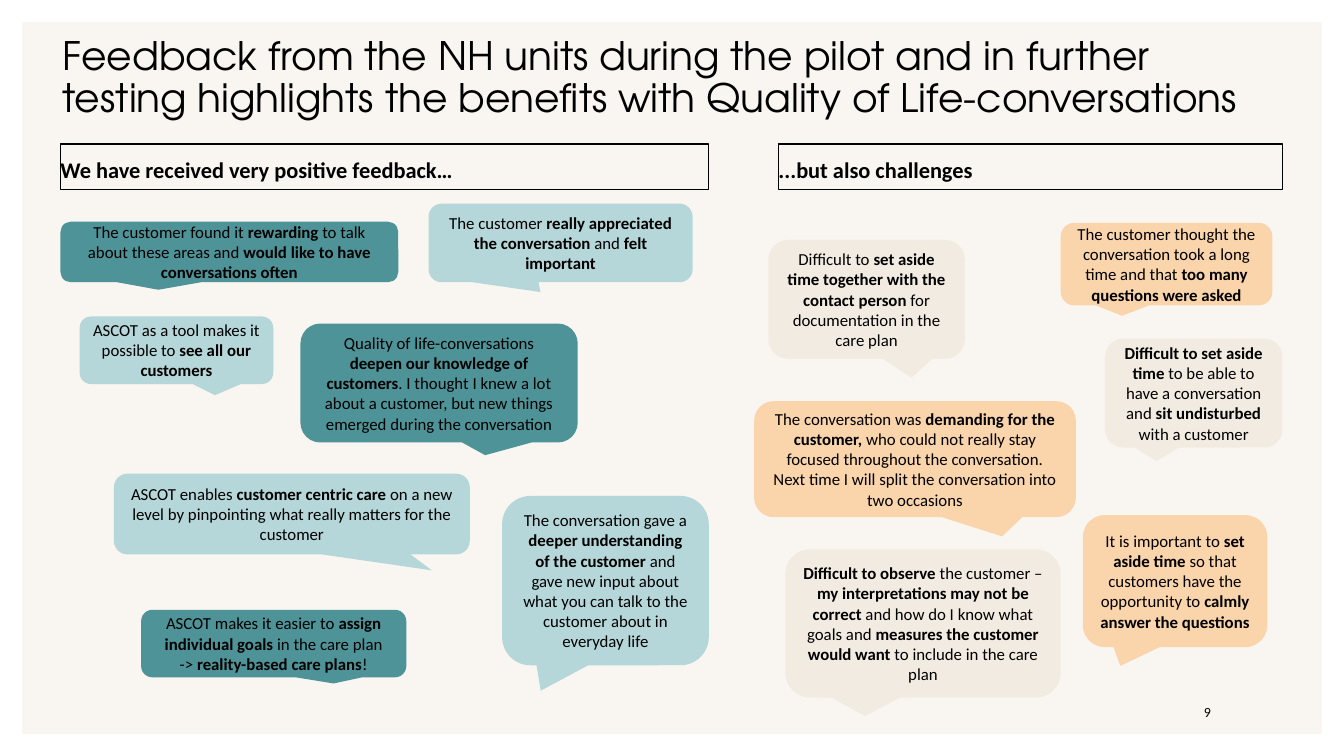
from pptx import Presentation
from pptx.dml.color import RGBColor
from pptx.enum.shapes import MSO_SHAPE as Shape
from pptx.enum.text import MSO_ANCHOR as Anchor, MSO_AUTO_SIZE as AutoSize, PP_ALIGN as Align
from pptx.util import Pt

PX = 9144  # EMU in one px, 100 px to the inch
COLORS = {
    "background": "F9F5F0",
    "white": "FFFFFF",
    "black": "000000",
    "teal": "4E9398",
    "aqua": "B5D7D9",
    "peach": "FAD4AA",
    "sand": "F2EBE1",
}
TITLE_FONT, BODY_FONT = "TeX Gyre Adventor", "Calibri"
DEFAULT_TAIL = (-0.21, 0.625)

TITLE = ("Feedback from the NH units during the pilot and in further testing "
         "highlights the benefits with Quality of Life-conversations")

# Box, colour, tail tip relative to the centre, text with bold between asterisks
QUOTES = [
    ((748, 398, 319, 115), "peach", (0.271, 0.667),
     "The conversation was **demanding for the customer,** who could not really stay focused "
     "throughout the conversation. Next time I will split the conversation into two occasions"),
    ((113, 470, 353, 80), "aqua", (0.393, 0.698),
     "ASCOT enables **customer centric care** on a new level by pinpointing "
     "what really matters for the customer"),
    ((298, 321, 275, 118), "teal", (0.166, 0.607),
     "Quality of life-conversations **deepen our knowledge of customers**. I thought I knew "
     "a lot about a customer, but new things emerged during the conversation"),
    ((762, 238, 195, 118), "sand", (0.228, 0.659),
     "Difficult to **set aside time together with the contact person** for documentation "
     "in the care plan"),
    ((425, 202, 262, 78), "aqua", (-0.076, 0.625),
     "The customer **really appreciated the conversation** and **felt important**"),
    ((60, 220, 335, 60), "teal", DEFAULT_TAIL,
     "The customer found it **rewarding** to talk about these areas and "
     "**would like to have conversations often**"),
    ((1052, 221, 210, 82), "peach", DEFAULT_TAIL,
     "The customer thought the conversation took a long time and that "
     "**too many questions were asked**"),
    ((498, 492, 205, 168), "aqua", (-0.313, 0.65),
     "The conversation gave a **deeper understanding of the customer** and gave new input "
     "about what you can talk to the customer about in everyday life"),
    ((1074, 511, 183, 131), "peach", (-0.297, 0.642),
     "It is important to **set aside time** so that customers have the opportunity to "
     "**calmly answer the questions**"),
    ((1096, 336, 176, 108), "sand", DEFAULT_TAIL,
     "**Difficult to set aside time** to be able to have a conversation and "
     "**sit undisturbed** with a customer"),
    ((779, 545, 273, 147), "sand", DEFAULT_TAIL,
     "**Difficult to observe** the customer – **my interpretations may not be correct** and how "
     "do I know what goals and **measures the customer would want** to include in the care plan"),
]
# These quotes start at the top edge and have no margins
TIGHT_QUOTES = [
    ((79, 314, 192, 67), "aqua", (0.199, 0.665),
     "ASCOT as a tool makes it possible to **see all our customers**"),
    ((140, 605, 263, 67), "teal", (0.226, 0.591),
     "ASCOT makes it easier to **assign individual goals** in the care plan\n"
     "-> **reality-based care plans**!"),
]


def rgb(name):
    return RGBColor.from_string(COLORS[name])


def emu(box):
    return [v * PX for v in box]


def place(s, box):
    s.left, s.top, s.width, s.height = emu(box)


def set_frame(tf, anchor, margins):
    """Fix the anchor and the left, top, right and bottom margins."""
    tf.word_wrap = True
    tf.auto_size = AutoSize.NONE
    tf.vertical_anchor = anchor
    tf.margin_left, tf.margin_top, tf.margin_right, tf.margin_bottom = emu(margins)


def style_font(font, size, bold=False, name=BODY_FONT):
    font.name, font.size, font.bold = name, Pt(size), bold
    font.color.rgb = rgb("black")


def fill_heading(s, box, text, size, bold, font_name, bottom):
    place(s, box)
    tf = s.text_frame
    tf.text = text
    set_frame(tf, Anchor.BOTTOM, (0, 0, 0, bottom))
    p = tf.paragraphs[0]
    p.alignment, p.line_spacing, p.space_before = Align.LEFT, 0.9, Pt(0)
    style_font(p.runs[0].font, size, bold, font_name)


def add_column_heading(s, box, text):
    fill_heading(s, box, text, 16, True, BODY_FONT, 6)
    s.line.color.rgb = rgb("black")
    s.line.width = Pt(1)


def add_filled(slide, kind, box, color):
    s = slide.shapes.add_shape(kind, *emu(box))
    s.shadow.inherit = False
    s.fill.solid()
    s.fill.fore_color.rgb = rgb(color)
    s.line.fill.background()
    return s


def add_quote(slide, box, color, tail, text, anchor=Anchor.MIDDLE, margins=(10, 5, 10, 5)):
    s = add_filled(slide, Shape.ROUNDED_RECTANGULAR_CALLOUT, box, color)
    s.adjustments[0], s.adjustments[1] = tail
    tf = s.text_frame
    set_frame(tf, anchor, margins)
    for i, line in enumerate(text.split("\n")):
        p = tf.add_paragraph() if i else tf.paragraphs[0]
        p.alignment = Align.CENTER
        for n, part in enumerate(line.split("**")):
            if part:
                r = p.add_run()
                r.text = part
                style_font(r.font, 12, bold=n % 2 == 1)


def add_page_number(slide, box, text):
    tf = slide.shapes.add_textbox(*emu(box)).text_frame
    tf.text = text
    set_frame(tf, Anchor.MIDDLE, (4, 4, 4, 4))
    p = tf.paragraphs[0]
    p.alignment = Align.RIGHT
    style_font(p.runs[0].font, 10)


def main():
    prs = Presentation()
    prs.slide_width, prs.slide_height = 1333 * PX, 750 * PX
    slide = prs.slides.add_slide(prs.slide_layouts.get_by_name("Comparison"))
    slide.background.fill.solid()
    slide.background.fill.fore_color.rgb = rgb("background")

    border = add_filled(slide, Shape.FRAME, (0, 0, 1333, 750), "white")
    border.adjustments[0] = 0.029

    title, positive, left_body, challenges, right_body = slide.placeholders
    fill_heading(title, (62, 25, 1211, 95), TITLE, 28, False, TITLE_FONT, 0)
    add_column_heading(positive, (60, 143, 643, 45), "We have received very positive feedback…")
    add_column_heading(challenges, (772, 143, 500, 45), "...but also challenges")
    for s in (left_body, right_body):
        s.element.getparent().remove(s.element)

    for quote in QUOTES:
        add_quote(slide, *quote)
    for quote in TIGHT_QUOTES:
        add_quote(slide, *quote, anchor=Anchor.TOP, margins=(0, 0, 0, 0))
    add_page_number(slide, (1166, 684, 39, 45), "9")
    prs.save("out.pptx")


if __name__ == "__main__":
    main()
